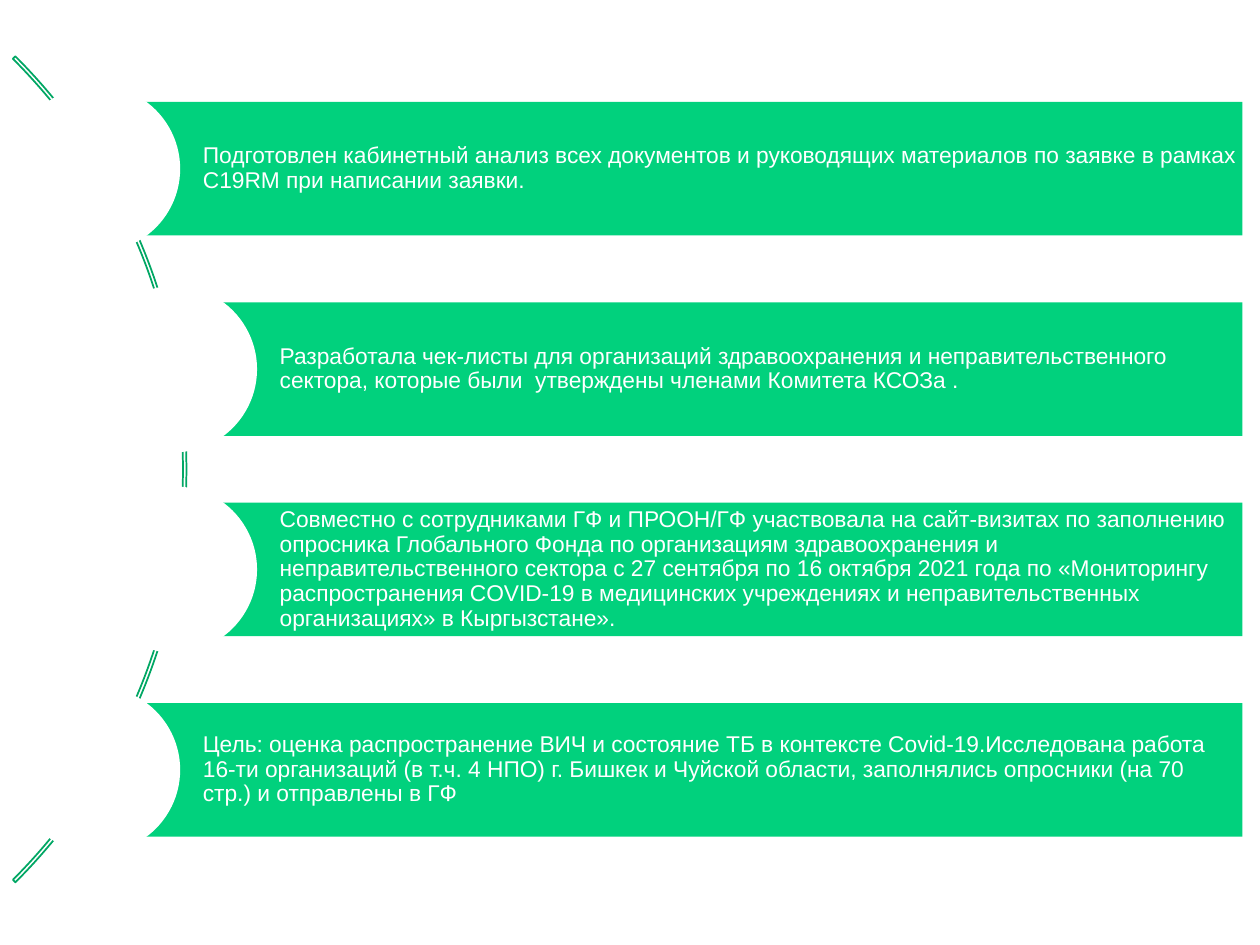
from pptx import Presentation
from pptx.dml.color import RGBColor
from pptx.enum import shapes, text
from pptx.util import Inches, Pt

KIND = shapes.MSO_SHAPE
GREEN, EDGE, WHITE = "01D17D", "01A764", "FFFFFF"

# (left edge of the bar, wording)
ITEMS = [
    (0.77, "Подготовлен кабинетный анализ всех документов и руководящих "
           "материалов по заявке в рамках C19RM при написании заявки."),
    (1.38, "Разработала чек-листы для организаций здравоохранения и "
           "неправительственного сектора, которые были  утверждены членами "
           "Комитета КСОЗа ."),
    (1.38, "Совместно с сотрудниками ГФ и ПРООН/ГФ участвовала на сайт-визитах "
           "по заполнению опросника Глобального Фонда по организациям "
           "здравоохранения и неправительственного сектора с 27 сентября по "
           "16 октября 2021 года по «Мониторингу распространения COVID-19 в "
           "медицинских учреждениях и неправительственных организациях» в "
           "Кыргызстане»."),
    (0.77, "Цель: оценка распространение ВИЧ и состояние ТБ в контексте "
           "Covid-19.Исследована работа 16-ти организаций (в т.ч. 4 НПО) "
           "г. Бишкек и Чуйской области, заполнялись опросники (на 70 стр.) "
           "и отправлены в ГФ"),
]
TOP, STEP, HIGH, RIGHT = 0.81, 1.59, 1.06, 9.86
DISC = 1.32


def color(code):
    return RGBColor.from_string(code)


def add(slide, kind, x, y, w, h, fill=None, line=None):
    shape = slide.shapes.add_shape(kind, *map(Inches, (x, y, w, h)))
    shape.shadow.inherit = False
    if fill:
        shape.fill.solid()
        shape.fill.fore_color.rgb = color(fill)
    else:
        shape.fill.background()
    if line:
        shape.line.color.rgb = color(line)
        shape.line.width = Pt(1)
    else:
        shape.line.fill.background()
    return shape


def write(shape, words):
    frame = shape.text_frame
    frame.text = words
    frame.word_wrap = True
    frame.vertical_anchor = text.MSO_ANCHOR.MIDDLE
    frame.margin_left = Inches(0.84)
    frame.margin_top = frame.margin_right = frame.margin_bottom = Inches(0.04)
    para = frame.paragraphs[0]
    para.alignment = text.PP_ALIGN.LEFT
    para.line_spacing = 0.9
    font = para.runs[0].font
    font.name, font.size = "Arial", Pt(13)
    font.color.rgb = color(WHITE)


def main():
    deck = Presentation()
    deck.slide_width, deck.slide_height = Inches(10), Inches(7.5)
    slide = deck.slides.add_slide(deck.slide_layouts[6])

    arc = add(slide, KIND.BLOCK_ARC, -7.79, -0.91, 9.27, 9.27, line=EDGE)
    for i, value in enumerate((189, 27, 0.003)):
        arc.adjustments[i] = value

    for row, (left, words) in enumerate(ITEMS):
        top = TOP + row * STEP
        bar = add(slide, KIND.RECTANGLE, left, top, RIGHT - left, HIGH, GREEN)
        write(bar, words)
        # Each disc is centred on the left edge of its bar
        add(slide, KIND.OVAL, left - DISC / 2, top + (HIGH - DISC) / 2,
            DISC, DISC, WHITE)

    deck.save("out.pptx")


if __name__ == "__main__":
    main()
